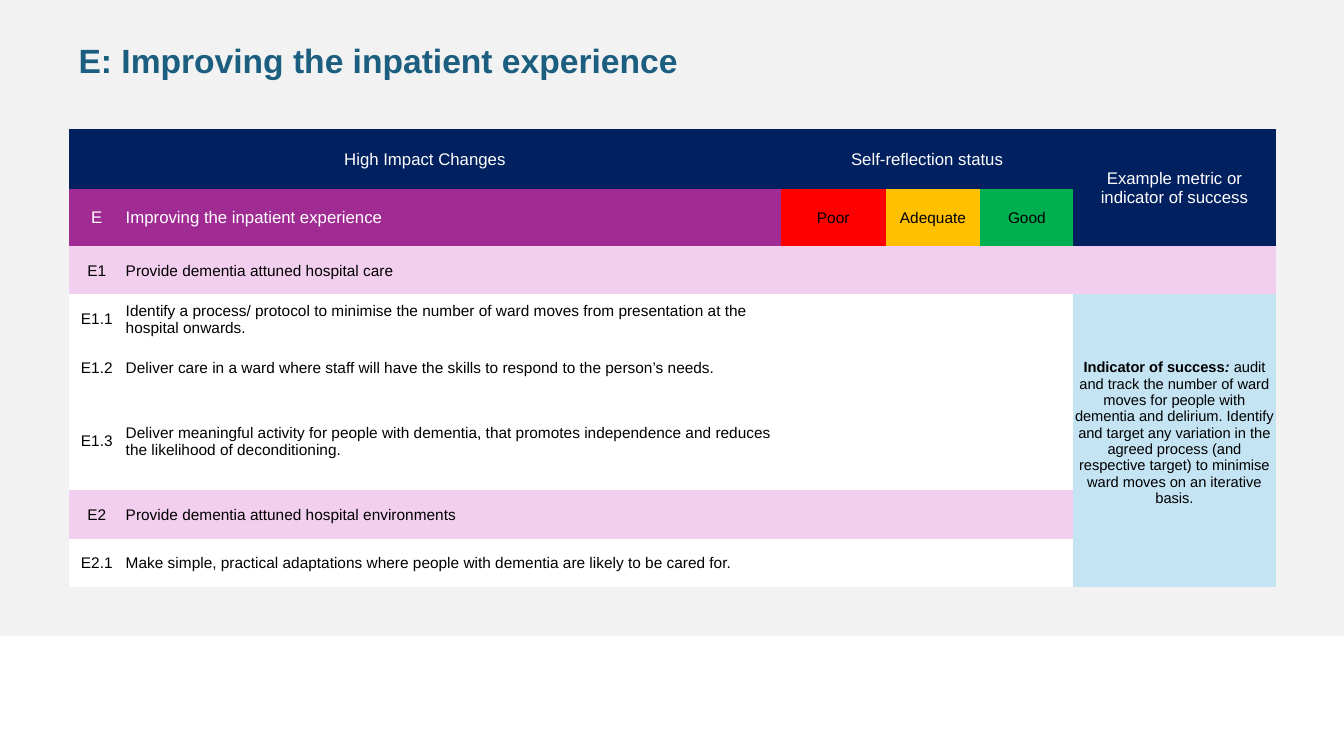
from dataclasses import dataclass

from pptx import Presentation, util as u
from pptx.dml.color import RGBColor
from pptx.enum import shapes, text
from pptx.oxml import ns

FONT = "Arial"
NAVY, PLUM, PINK, WHITE = "002060", "A02B93", "F2CEEF", "FFFFFF"
BLACK, SKY = "000000", "C4E3F3"
PLAIN_STYLE = "{2D5ABB26-0587-4C30-8999-92F81FD0307C}"


@dataclass
class Run:
    text: str
    size: float = 11
    color: str = BLACK
    bold: bool = False
    italic: bool = False


@dataclass
class Entry:
    row: int
    col: int
    runs: list[Run]
    fill: str
    rows: int = 1
    cols: int = 1
    foot: float = 0


@dataclass
class Change:
    code: str
    label: str
    height: float = 1.23

    def is_group(self) -> bool:
        return "." not in self.code


def paint(fill, color: str) -> None:
    fill.solid()
    fill.fore_color.rgb = RGBColor.from_string(color)


def write(para, runs: list[Run]) -> None:
    for item in runs:
        run = para.add_run()
        run.text = item.text
        font = run.font
        font.name, font.size = FONT, u.Pt(item.size)
        font.bold, font.italic = item.bold, item.italic
        font.color.rgb = RGBColor.from_string(item.color)


def draw(table, entry: Entry) -> None:
    cell = table.cell(entry.row, entry.col)
    if entry.rows * entry.cols > 1:
        cell.merge(table.cell(entry.row + entry.rows - 1,
                              entry.col + entry.cols - 1))
    paint(cell.fill, entry.fill)
    cell.vertical_anchor = text.MSO_ANCHOR.MIDDLE
    cell.margin_left = cell.margin_right = cell.margin_top = u.Cm(0.03)
    cell.margin_bottom = u.Cm(entry.foot)
    para = cell.text_frame.paragraphs[0]
    # Labels in the second column read from the left
    para.alignment = (text.PP_ALIGN.LEFT if entry.col == 1
                      else text.PP_ALIGN.CENTER)
    write(para, entry.runs)


def head(label: str) -> list[Run]:
    return [Run(label, 12, WHITE)]


CHANGES = [
    Change("E1", "Provide dementia attuned hospital care"),
    Change("E1.1", "Identify a process/ protocol to minimise the number of "
           "ward moves from presentation at the hospital onwards."),
    Change("E1.2", "Deliver care in a ward where staff will have the skills "
           "to respond to the person’s needs."),
    Change("E1.3", "Deliver meaningful activity for people with dementia, "
           "that promotes independence and reduces the likelihood of "
           "deconditioning.", 2.46),
    Change("E2", "Provide dementia attuned hospital environments"),
    Change("E2.1", "Make simple, practical adaptations where people with "
           "dementia are likely to be cared for."),
]
STATUS = [("Poor", "FF0000"), ("Adequate", "FFC000"), ("Good", "00B050")]
METRIC = [
    Run("Indicator of success", 10.5, bold=True),
    Run(": ", 10.5, bold=True, italic=True),
    Run("audit and track the number of ward moves for people with dementia "
        "and delirium. Identify and target any variation in the agreed "
        "process (and respective target) to minimise ward moves on an "
        "iterative basis.", 10.5),
]
WIDTHS = [1.4, 16.54, 2.64, 2.39, 2.34, 5.1]
HEIGHTS = [1.5, 1.44] + [change.height for change in CHANGES]


def add_back(slide) -> None:
    back = slide.shapes.add_shape(shapes.MSO_SHAPE.RECTANGLE, 0, 0,
                                  u.Cm(33.87), u.Cm(16.03))
    back.shadow.inherit = False
    back.line.fill.background()
    paint(back.fill, "F2F2F2")


def add_title(slide) -> None:
    box = slide.shapes.add_textbox(u.Cm(1.73), u.Cm(0.76),
                                   u.Cm(30.4), u.Cm(1.3))
    box.text_frame.word_wrap = True
    para = box.text_frame.paragraphs[0]
    para.line_spacing = u.Pt(32)
    write(para, [Run("E: Improving the inpatient experience", 24, "1B5E7F",
                     bold=True)])


def add_grid(slide) -> None:
    frame = slide.shapes.add_table(len(HEIGHTS), len(WIDTHS), u.Cm(1.74),
                                   u.Cm(3.25), u.Cm(sum(WIDTHS)),
                                   u.Cm(sum(HEIGHTS)))
    table = frame.table
    table._tbl.tblPr.find(ns.qn("a:tableStyleId")).text = PLAIN_STYLE
    for col, width in zip(table.columns, WIDTHS):
        col.width = u.Cm(width)
    for row, height in zip(table.rows, HEIGHTS):
        row.height = u.Cm(height)

    # Heading rows
    entries = [
        Entry(0, 0, head("High Impact Changes"), NAVY, cols=2),
        Entry(0, 2, head("Self-reflection status"), NAVY, cols=3),
        Entry(0, 5, head("Example metric or indicator of success"), NAVY,
              rows=2),
        Entry(1, 0, head("E"), PLUM),
        Entry(1, 1, head("Improving the inpatient experience"), PLUM),
    ]
    entries += [Entry(1, col, [Run(label)], color)
                for col, (label, color) in enumerate(STATUS, 2)]

    # Changes, with empty status cells
    for row, change in enumerate(CHANGES, 2):
        fill = PINK if change.is_group() else WHITE
        entries += [Entry(row, 0, [Run(change.code)], fill),
                    Entry(row, 1, [Run(change.label)], fill)]
        entries += [Entry(row, col, [], fill) for col in (2, 3, 4)]

    # Metric column
    entries += [Entry(2, 5, [], PINK),
                Entry(3, 5, METRIC, SKY, rows=5, foot=0.43)]
    for entry in entries:
        draw(table, entry)


def main() -> None:
    deck = Presentation()
    deck.slide_width, deck.slide_height = u.Cm(33.87), u.Cm(19.05)
    slide = deck.slides.add_slide(deck.slide_layouts[6])
    add_back(slide)
    add_title(slide)
    add_grid(slide)
    deck.save("out.pptx")


if __name__ == "__main__":
    main()
